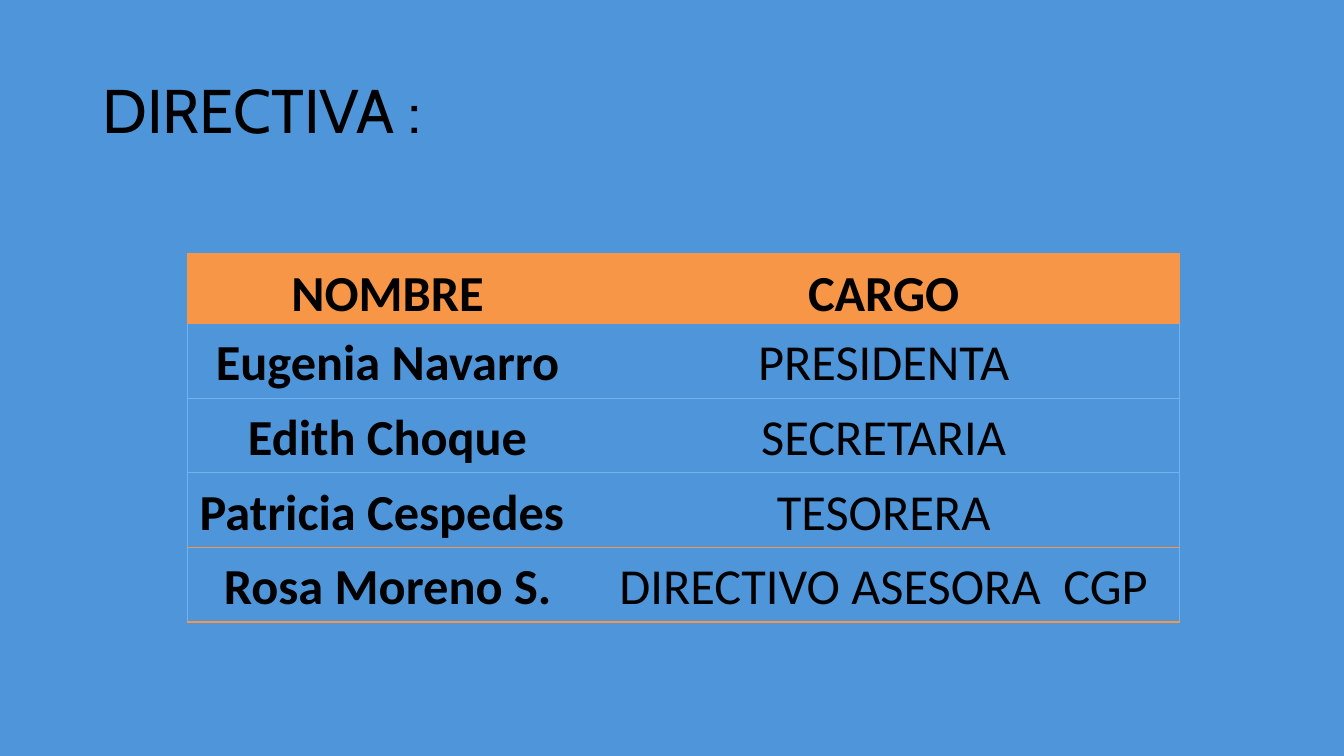
from lxml import etree
from pptx import Presentation
from pptx.dml.color import RGBColor
from pptx.enum.text import MSO_ANCHOR, PP_ALIGN
from pptx.oxml.ns import qn
from pptx.util import Cm, Pt

CENTER, MIDDLE, TOP = PP_ALIGN.CENTER, MSO_ANCHOR.MIDDLE, MSO_ANCHOR.TOP
BLUE = RGBColor(0x4E, 0x95, 0xD9)
PALE_BLUE = RGBColor(0x72, 0xB2, 0xED)
ORANGE = RGBColor(0xF7, 0x96, 0x46)
BLACK = RGBColor(0, 0, 0)

# Content
TITLE = "DIRECTIVA :"
BOARD = [
    ("NOMBRE", "CARGO"),
    ("Eugenia Navarro", "PRESIDENTA"),
    ("Edith Choque", "SECRETARIA"),
    ("Patricia Cespedes ", "TESORERA"),
    ("Rosa Moreno S.", "DIRECTIVO ASESORA  CGP"),
]

# Layout and formats
COLUMN_WIDTHS = [Cm(10.1), Cm(14.9)]
ROW_HEIGHTS = [Cm(1.73)] + [Cm(1.88)] * (len(BOARD) - 1)
RULE_COLORS = [ORANGE, ORANGE, PALE_BLUE, PALE_BLUE, ORANGE, ORANGE]
CELL_FORMAT = {"margin_left": Cm(0.18), "margin_right": Cm(0.18),
               "margin_top": 0, "margin_bottom": 0, "vertical_anchor": TOP}
PLAIN_STYLE = "{2D5ABB26-0587-4C30-8999-92F81FD0307C}"


def write(paragraph, text, spacing, **font_format):
    paragraph.line_spacing = spacing
    run = paragraph.add_run()
    run.text = text
    run.font.color.rgb = BLACK
    for attribute, value in font_format.items():
        setattr(run.font, attribute, value)


def set_borders(cell, colors):
    """Draw left, right, top and bottom lines; None hides a line."""
    properties = cell._tc.get_or_add_tcPr()
    for index, (side, color) in enumerate(zip("LRTB", colors)):
        line = etree.Element(qn(f"a:ln{side}"), w=str(Pt(1)))
        if color is None:
            etree.SubElement(line, qn("a:noFill"))
        else:
            fill = etree.SubElement(line, qn("a:solidFill"))
            etree.SubElement(fill, qn("a:srgbClr"), val=str(color))
        properties.insert(index, line)


presentation = Presentation()
presentation.slide_width, presentation.slide_height = Cm(33.87), Cm(19.05)
slide = presentation.slides.add_slide(presentation.slide_layouts[6])
slide.background.fill.solid()
slide.background.fill.fore_color.rgb = BLUE

# Title
title = slide.shapes.add_textbox(Cm(2.33), Cm(1.01), Cm(29.21), Cm(3.68)).text_frame
title.word_wrap = True
title.vertical_anchor = MIDDLE
write(title.paragraphs[0], TITLE, 0.9, name="Cabin", size=Pt(44))

# Board table
board = slide.shapes.add_table(
    len(BOARD), len(COLUMN_WIDTHS), Cm(4.72), Cm(6.4),
    sum(COLUMN_WIDTHS), sum(ROW_HEIGHTS)).table
board.first_row = True
board.horz_banding = False
board._tbl.tblPr.find(qn("a:tableStyleId")).text = PLAIN_STYLE
for column, width in zip(board.columns, COLUMN_WIDTHS):
    column.width = width
for row, height in zip(board.rows, ROW_HEIGHTS):
    row.height = height

for r, entry in enumerate(BOARD):
    is_header = r == 0
    side_color = ORANGE if is_header else PALE_BLUE
    for c, text in enumerate(entry):
        is_name = c == 0
        cell = board.cell(r, c)
        for attribute, value in CELL_FORMAT.items():
            setattr(cell, attribute, value)
        if is_header:
            cell.fill.solid()
            cell.fill.fore_color.rgb = ORANGE
        else:
            cell.fill.background()
        set_borders(cell, [side_color if is_name else None,
                           None if is_name else side_color,
                           RULE_COLORS[r], RULE_COLORS[r + 1]])
        paragraph = cell.text_frame.paragraphs[0]
        paragraph.alignment = CENTER
        write(paragraph, text, 1.15, name="Calibri", size=Pt(36),
              bold=is_header or is_name)

presentation.save("out.pptx")
